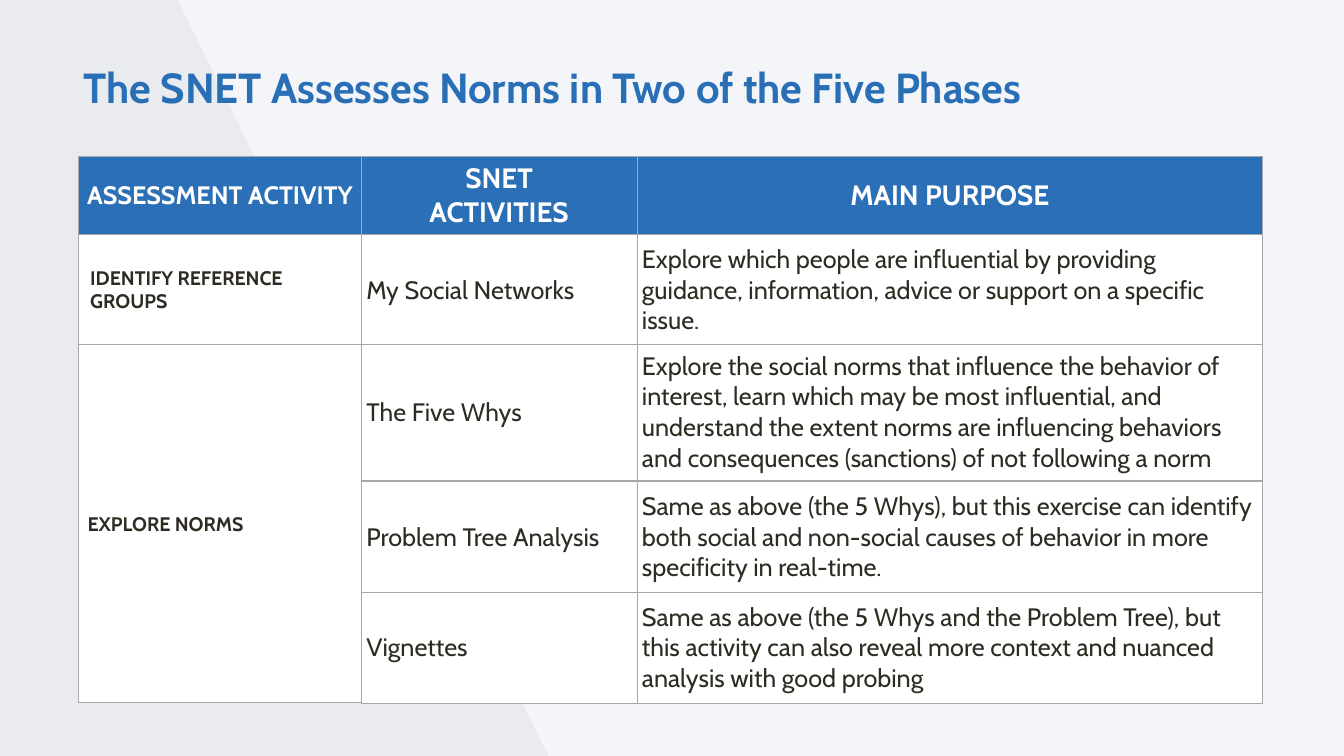
from dataclasses import dataclass

from lxml.etree import SubElement
from pptx import Presentation
from pptx.dml.color import RGBColor
from pptx.enum.shapes import MSO_SHAPE
from pptx.enum.text import MSO_ANCHOR, MSO_AUTO_SIZE, PP_ALIGN
from pptx.oxml.ns import qn
from pptx.util import Pt

COLOURS = {
    "background": "F4F5F9",
    "wedge": "393941",
    "title": "296FB6",
    "header": "2B6FB6",
    "white": "FFFFFF",
    "text": "2E2C22",
    "border": "A6A7AC",
}
FONT = "Cabin"
LEFT = 112.3
PHASE_WIDTH, ACTIVITY_WIDTH, PURPOSE_WIDTH = 403.9, 393.8, 894.2
ACTIVITY_LEFT = LEFT + PHASE_WIDTH
EXPLORE_TOP, EXPLORE_HEIGHT = 491.8, 511.9


@dataclass
class Entry:
    text: str
    size: float = 36
    bold: bool = False
    colour: str = "text"
    fill: str = "white"
    centred: bool = False
    indent: float = 0


@dataclass
class Grid:
    left: float
    top: float
    widths: list[float]
    heights: list[float]
    rows: list[list[Entry]]


def header(text: str, size: float = 40) -> Entry:
    return Entry(text, size, True, "white", "header", True)


GRIDS = [
    Grid(LEFT, 223.2, [PHASE_WIDTH, ACTIVITY_WIDTH, PURPOSE_WIDTH], [111.6, 159.1], [
        [header("ASSESSMENT ACTIVITY", 36), header("SNET\nACTIVITIES"), header("MAIN PURPOSE")],
        [Entry("IDENTIFY REFERENCE GROUPS", 28, True, indent=9.4),
         Entry("My Social Networks"),
         Entry("Explore which people are influential by providing guidance, information, "
               "advice or support on a specific issue.")],
    ]),
] + [
    Grid(ACTIVITY_LEFT, top, [ACTIVITY_WIDTH, PURPOSE_WIDTH], [height],
         [[Entry(activity), Entry(purpose)]])
    for top, height, activity, purpose in [
        (EXPLORE_TOP, 194.4, "The Five Whys",
         "Explore the social norms that influence the behavior of interest, learn which may be "
         "most influential, and understand the extent norms are influencing behaviors and "
         "consequences (sanctions) of not following a norm"),
        (687.6, 159.1, "Problem Tree Analysis",
         "Same as above (the 5 Whys), but this exercise can identify both social and non-social "
         "causes of behavior in more specificity in real-time."),
        (846, 159.1, "Vignettes",
         "Same as above (the 5 Whys and the Problem Tree), but this activity can also reveal "
         "more context and nuanced analysis with good probing"),
    ]
]


def rgb(name: str) -> RGBColor:
    return RGBColor.from_string(COLOURS[name])


def paint(fill, colour: str) -> None:
    fill.solid()
    fill.fore_color.rgb = rgb(colour)


def write(para, text: str, size: float, bold: bool, colour: str) -> None:
    """Add the text as runs, with a line break at each newline."""
    for index, line in enumerate(text.split("\n")):
        if index:
            para.add_line_break()
        span = para.add_run()
        span.text = line
        span.font.name = FONT
        span.font.size = Pt(size)
        span.font.bold = bold
        span.font.color.rgb = rgb(colour)


def add_label(shapes, left: float, top: float, width: float, height: float,
              text: str, size: float, colour: str, wrap: bool):
    box = shapes.add_textbox(Pt(left), Pt(top), Pt(width), Pt(height))
    box.text_frame.word_wrap = wrap
    box.text_frame.auto_size = MSO_AUTO_SIZE.SHAPE_TO_FIT_TEXT
    write(box.text_frame.paragraphs[0], text, size, True, colour)
    return box


def add_borders(cell) -> None:
    properties = cell._tc.get_or_add_tcPr()
    for side in ("a:lnL", "a:lnR", "a:lnT", "a:lnB"):
        line = SubElement(properties, qn(side), w=str(Pt(1)))
        solid = SubElement(line, qn("a:solidFill"))
        SubElement(solid, qn("a:srgbClr"), val=COLOURS["border"])


def fill_cell(cell, entry: Entry) -> None:
    add_borders(cell)
    paint(cell.fill, entry.fill)
    cell.vertical_anchor = MSO_ANCHOR.MIDDLE
    para = cell.text_frame.paragraphs[0]
    para.alignment = PP_ALIGN.CENTER if entry.centred else PP_ALIGN.LEFT
    if entry.indent:
        para._p.get_or_add_pPr().set("marL", str(Pt(entry.indent)))
    write(para, entry.text, entry.size, entry.bold, entry.colour)


def add_grid(page, grid: Grid) -> None:
    table = page.shapes.add_table(
        len(grid.heights), len(grid.widths), Pt(grid.left), Pt(grid.top),
        Pt(sum(grid.widths)), Pt(sum(grid.heights))).table
    table.first_row = len(grid.rows) > 1
    table.horz_banding = False
    for column, width in zip(table.columns, grid.widths):
        column.width = Pt(width)
    for row, height, entries in zip(table.rows, grid.heights, grid.rows):
        row.height = Pt(height)
        for cell, entry in zip(row.cells, entries):
            fill_cell(cell, entry)


def add_wedge(page) -> None:
    """Draw the faint slanted panel on the left of the page."""
    builder = page.shapes.build_freeform(0, 0, scale=Pt(1))
    builder.add_line_segments([(254, 0), (784, 1081), (0, 1081)], close=True)
    wedge = builder.convert_to_shape()
    wedge.shadow.inherit = False
    paint(wedge.fill, "wedge")
    wedge.line.fill.background()
    colour = wedge._element.spPr.find(qn("a:solidFill")).find(qn("a:srgbClr"))
    SubElement(colour, qn("a:alpha"), val="5000")


def add_explore_phase(page) -> None:
    group = page.shapes.add_group_shape()
    panel = group.shapes.add_shape(MSO_SHAPE.RECTANGLE, Pt(LEFT), Pt(EXPLORE_TOP),
                                   Pt(PHASE_WIDTH), Pt(EXPLORE_HEIGHT))
    panel.shadow.inherit = False
    paint(panel.fill, "white")
    panel.line.color.rgb = rgb("border")
    panel.line.width = Pt(1)
    add_label(group.shapes, 118.1, 727.9, 270.7, 41, "EXPLORE NORMS", 28, "text", False)


def main() -> None:
    deck = Presentation()
    deck.slide_width, deck.slide_height = Pt(1920.24), Pt(1080)
    page = deck.slides.add_slide(deck.slide_layouts[6])
    paint(page.background.fill, "background")
    add_wedge(page)
    title = add_label(page.shapes, LEFT, 92.9, 1649.5, 72.7,
                      "The SNET Assesses Norms in Two of the Five Phases", 60, "title", True)
    title.text_frame.paragraphs[0].line_spacing = 0.9
    phase_grid, *activity_grids = GRIDS
    add_grid(page, phase_grid)
    add_explore_phase(page)
    for grid in activity_grids:
        add_grid(page, grid)
    deck.save("out.pptx")


if __name__ == "__main__":
    main()
